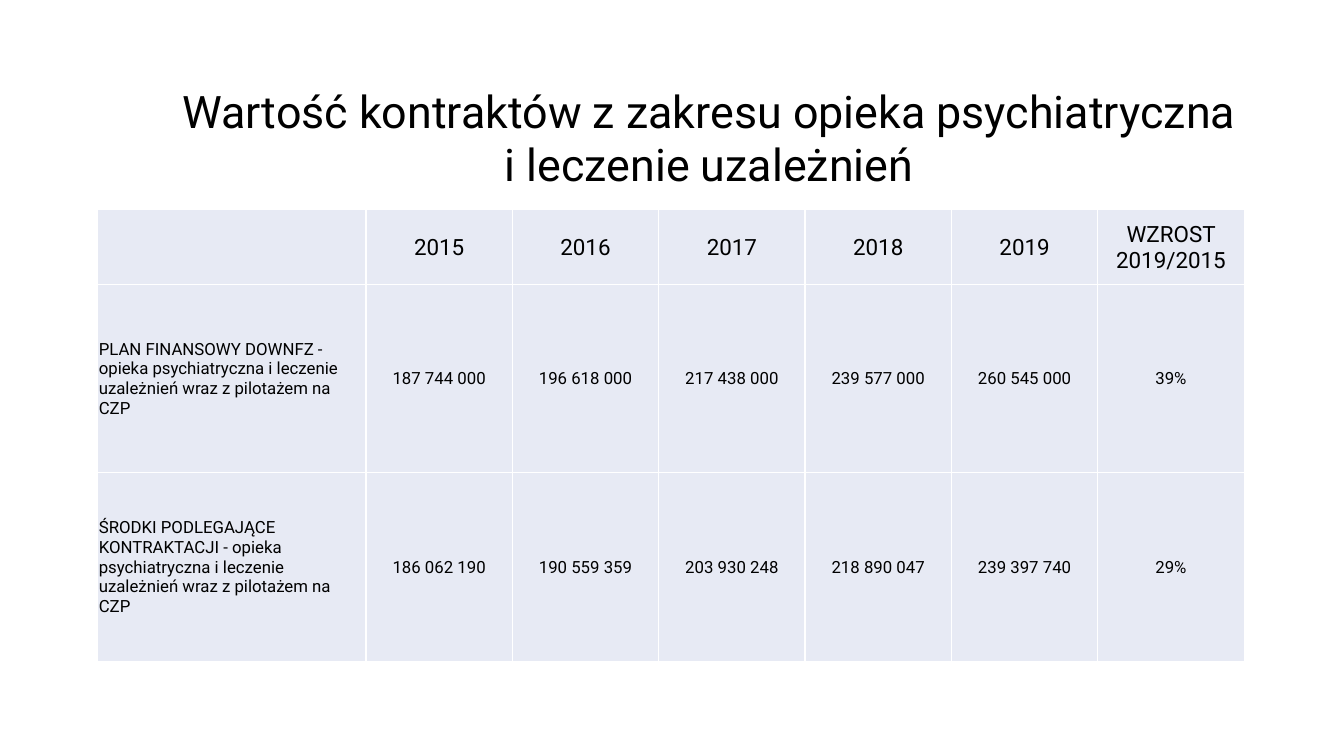
import pptx
import pptx.dml.color
import pptx.enum.text
import pptx.oxml
import pptx.oxml.ns
import pptx.util

TITLE = "Wartość kontraktów z zakresu opieka psychiatryczna i leczenie uzależnień"
ROWS = [
    ["", "2015", "2016", "2017", "2018", "2019", "WZROST 2019/2015"],
    ["PLAN FINANSOWY DOWNFZ - opieka psychiatryczna i leczenie uzależnień wraz z pilotażem na CZP",
     "187 744 000", "196 618 000", "217 438 000", "239 577 000", "260 545 000", "39%"],
    ["ŚRODKI PODLEGAJĄCE KONTRAKTACJI - opieka psychiatryczna i leczenie uzależnień wraz z pilotażem na CZP",
     "186 062 190", "190 559 359", "203 930 248", "218 890 047", "239 397 740", "29%"],
]
COLORS = {"text": "000000", "cell": "E7EAF4", "border": "FFFFFF"}
FONT = "Roboto"
SLIDE_WIDTH, SLIDE_HEIGHT = 13.33, 7.5
TABLE_LEFT, TABLE_TOP, TABLE_WIDTH, TABLE_HEIGHT = 0.97, 2.08, 11.37, 4.48
LABEL_WIDTH, HEADER_HEIGHT = 2.66, 0.74
TITLE_LEFT, TITLE_TOP, TITLE_HEIGHT = 1.73, 0.96, 0.8
ALIGN = pptx.enum.text.PP_ALIGN
MIDDLE = pptx.enum.text.MSO_ANCHOR.MIDDLE
inches = pptx.util.Inches


def format_paragraph(paragraph, size, alignment):
    paragraph.alignment = alignment
    paragraph.font.name = FONT
    paragraph.font.size = pptx.util.Pt(size)
    paragraph.font.bold = False
    paragraph.font.color.rgb = pptx.dml.color.RGBColor.from_string(COLORS["text"])


def add_borders(cell):
    properties = cell._tc.get_or_add_tcPr()
    for index, side in enumerate(("lnL", "lnR", "lnT", "lnB")):
        line = pptx.oxml.parse_xml(
            f'<a:{side} {pptx.oxml.ns.nsdecls("a")} w="12700"><a:solidFill>'
            f'<a:srgbClr val="{COLORS["border"]}"/></a:solidFill></a:{side}>')
        properties.insert(index, line)


def add_title(slide):
    title = slide.shapes.title
    title.left, title.top = inches(TITLE_LEFT), inches(TITLE_TOP)
    title.width = inches(TABLE_LEFT + TABLE_WIDTH - TITLE_LEFT)
    title.height = inches(TITLE_HEIGHT)
    frame = title.text_frame
    frame.text = TITLE
    frame.word_wrap = True
    frame.auto_size = pptx.enum.text.MSO_AUTO_SIZE.NONE
    frame.vertical_anchor = MIDDLE
    frame.margin_left = frame.margin_right = frame.margin_top = frame.margin_bottom = 0
    format_paragraph(frame.paragraphs[0], 32, ALIGN.CENTER)


def add_contract_table(slide):
    row_count, column_count = len(ROWS), len(ROWS[0])
    table = slide.shapes.add_table(
        row_count, column_count, inches(TABLE_LEFT), inches(TABLE_TOP),
        inches(TABLE_WIDTH), inches(TABLE_HEIGHT)).table
    value_width = (TABLE_WIDTH - LABEL_WIDTH) / (column_count - 1)
    value_height = (TABLE_HEIGHT - HEADER_HEIGHT) / (row_count - 1)
    for index, column in enumerate(table.columns):
        column.width = inches(value_width if index else LABEL_WIDTH)
    for index, row in enumerate(table.rows):
        row.height = inches(value_height if index else HEADER_HEIGHT)
    for row_index, texts in enumerate(ROWS):
        for column_index, text in enumerate(texts):
            cell = table.cell(row_index, column_index)
            cell.text = text
            cell.vertical_anchor = MIDDLE
            cell.margin_left = cell.margin_right = cell.margin_top = inches(0.01)
            cell.margin_bottom = 0
            cell.fill.solid()
            cell.fill.fore_color.rgb = pptx.dml.color.RGBColor.from_string(COLORS["cell"])
            add_borders(cell)
            format_paragraph(cell.text_frame.paragraphs[0],
                             12 if row_index else 16,
                             ALIGN.CENTER if column_index else ALIGN.LEFT)


def main():
    presentation = pptx.Presentation()
    presentation.slide_width = inches(SLIDE_WIDTH)
    presentation.slide_height = inches(SLIDE_HEIGHT)
    slide = presentation.slides.add_slide(presentation.slide_layouts[5])
    add_title(slide)
    add_contract_table(slide)
    presentation.save("out.pptx")


if __name__ == "__main__":
    main()
